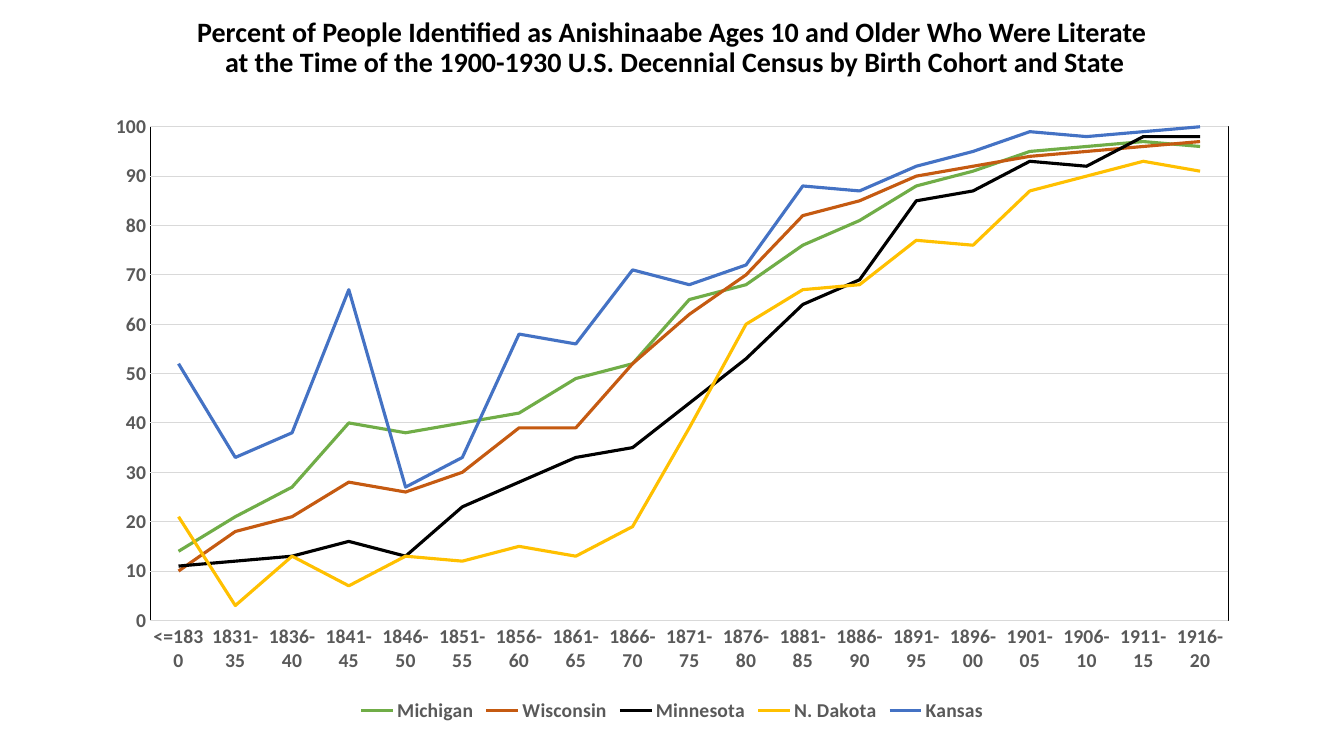
from lxml import etree
from pptx import Presentation
from pptx.chart.data import CategoryChartData
from pptx.dml.color import RGBColor
from pptx.enum.chart import XL_CHART_TYPE, XL_LEGEND_POSITION, XL_TICK_MARK
from pptx.enum.text import MSO_ANCHOR, MSO_AUTO_SIZE, PP_ALIGN
from pptx.oxml import parse_xml
from pptx.util import Inches, Pt

TITLE = [
    "Percent of People Identified as Anishinaabe Ages 10 and Older Who Were Literate",
    " at the Time of the 1900-1930 U.S. Decennial Census by Birth Cohort and State",
]
COHORTS = ["<=1830"] + [
    f"{start}-{(start + 4) % 100:02d}" for start in range(1831, 1917, 5)
]
STATES = [
    ("Michigan", "70AD47",
     [14, 21, 27, 40, 38, 40, 42, 49, 52, 65, 68, 76, 81, 88, 91, 95, 96, 97, 96]),
    ("Wisconsin", "C55A11",
     [10, 18, 21, 28, 26, 30, 39, 39, 52, 62, 70, 82, 85, 90, 92, 94, 95, 96, 97]),
    ("Minnesota", "000000",
     [11, 12, 13, 16, 13, 23, 28, 33, 35, 44, 53, 64, 69, 85, 87, 93, 92, 98, 98]),
    ("N. Dakota", "FFC000",
     [21, 3, 13, 7, 13, 12, 15, 13, 19, 39, 60, 67, 68, 77, 76, 87, 90, 93, 91]),
    ("Kansas", "4472C4",
     [52, 33, 38, 67, 27, 33, 58, 56, 71, 68, 72, 88, 87, 92, 95, 99, 98, 99, 100]),
]
FONT, BLACK, GREY, PALE = "Calibri", "000000", "595959", "D9D9D9"
SLIDE_WIDTH, SLIDE_HEIGHT = 13.33, 7.5
CONTENT_WIDTH = 11.5
MARGIN = (SLIDE_WIDTH - CONTENT_WIDTH) / 2
TITLE_TOP, TITLE_HEIGHT = 0.12, 0.71
CHART_TOP, CHART_HEIGHT = 1.01, 6.2
PLOT_SHARES = {"x": 0.05, "y": 0.04, "w": 0.93, "h": 0.79}
CHART_NAMESPACE = "http://schemas.openxmlformats.org/drawingml/2006/chart"
DRAWING_NAMESPACE = "http://schemas.openxmlformats.org/drawingml/2006/main"


def color(value):
    """Turn a hex string into a colour."""
    return RGBColor.from_string(value)


def style_font(font, size, value):
    """Set the bold face of a font with its size and colour."""
    font.name, font.size, font.bold = FONT, Pt(size), True
    font.color.rgb = color(value)


def style_line(line, value, width):
    """Set the colour and width of a line."""
    line.color.rgb = color(value)
    line.width = Pt(width)


def frame_plot(chart):
    """Place the plot area by shares of the chart and give it a black border."""
    plot_area = chart._chartSpace.find(f".//{{{CHART_NAMESPACE}}}plotArea")
    for layout in plot_area.findall(f"{{{CHART_NAMESPACE}}}layout"):
        plot_area.remove(layout)
    layout = etree.Element(f"{{{CHART_NAMESPACE}}}layout")
    manual = etree.SubElement(layout, f"{{{CHART_NAMESPACE}}}manualLayout")
    settings = {"layoutTarget": "inner", "xMode": "edge", "yMode": "edge", **PLOT_SHARES}
    for name, value in settings.items():
        etree.SubElement(manual, f"{{{CHART_NAMESPACE}}}{name}", val=str(value))
    plot_area.insert(0, layout)
    plot_area.append(parse_xml(
        f'<c:spPr xmlns:c="{CHART_NAMESPACE}" xmlns:a="{DRAWING_NAMESPACE}"><a:noFill/>'
        f'<a:ln w="9525"><a:solidFill><a:srgbClr val="{BLACK}"/></a:solidFill></a:ln></c:spPr>'
    ))


def add_literacy_chart(slide):
    """Add the line chart with one line for each state."""
    data = CategoryChartData()
    data.categories = COHORTS
    for name, _, values in STATES:
        data.add_series(name, values)
    chart = slide.shapes.add_chart(
        XL_CHART_TYPE.LINE, Inches(MARGIN), Inches(CHART_TOP),
        Inches(CONTENT_WIDTH), Inches(CHART_HEIGHT), data,
    ).chart
    style_font(chart.font, 14, GREY)
    chart.has_title = False
    chart.has_legend = True
    chart.legend.position = XL_LEGEND_POSITION.BOTTOM
    chart.legend.include_in_layout = False
    style_font(chart.legend.font, 14, GREY)
    chart.plots[0].vary_by_categories = False
    for series, (_, value, _) in zip(chart.plots[0].series, STATES):
        series.smooth = False
        style_line(series.format.line, value, 2.25)
    for axis in (chart.category_axis, chart.value_axis):
        axis.major_tick_mark = axis.minor_tick_mark = XL_TICK_MARK.NONE
        style_font(axis.tick_labels.font, 14, GREY)
    style_line(chart.category_axis.format.line, PALE, 0.75)
    value_axis = chart.value_axis
    value_axis.minimum_scale, value_axis.maximum_scale, value_axis.major_unit = 0, 100, 10
    value_axis.format.line.fill.background()
    style_line(value_axis.major_gridlines.format.line, PALE, 0.75)
    frame_plot(chart)


def add_title(slide):
    """Add the two centred title lines."""
    frame = slide.shapes.add_textbox(
        Inches(MARGIN), Inches(TITLE_TOP), Inches(CONTENT_WIDTH), Inches(TITLE_HEIGHT)
    ).text_frame
    frame.word_wrap = True
    frame.auto_size = MSO_AUTO_SIZE.SHAPE_TO_FIT_TEXT
    frame.vertical_anchor = MSO_ANCHOR.BOTTOM
    frame.text = "\n".join(TITLE)
    for paragraph in frame.paragraphs:
        paragraph.alignment = PP_ALIGN.CENTER
        paragraph.line_spacing = 0.9
        style_font(paragraph.font, 20, BLACK)


def main():
    """Build the slide and save it."""
    presentation = Presentation()
    presentation.slide_width = Inches(SLIDE_WIDTH)
    presentation.slide_height = Inches(SLIDE_HEIGHT)
    slide = presentation.slides.add_slide(presentation.slide_layouts[6])
    add_literacy_chart(slide)
    add_title(slide)
    presentation.save("out.pptx")


if __name__ == "__main__":
    main()
